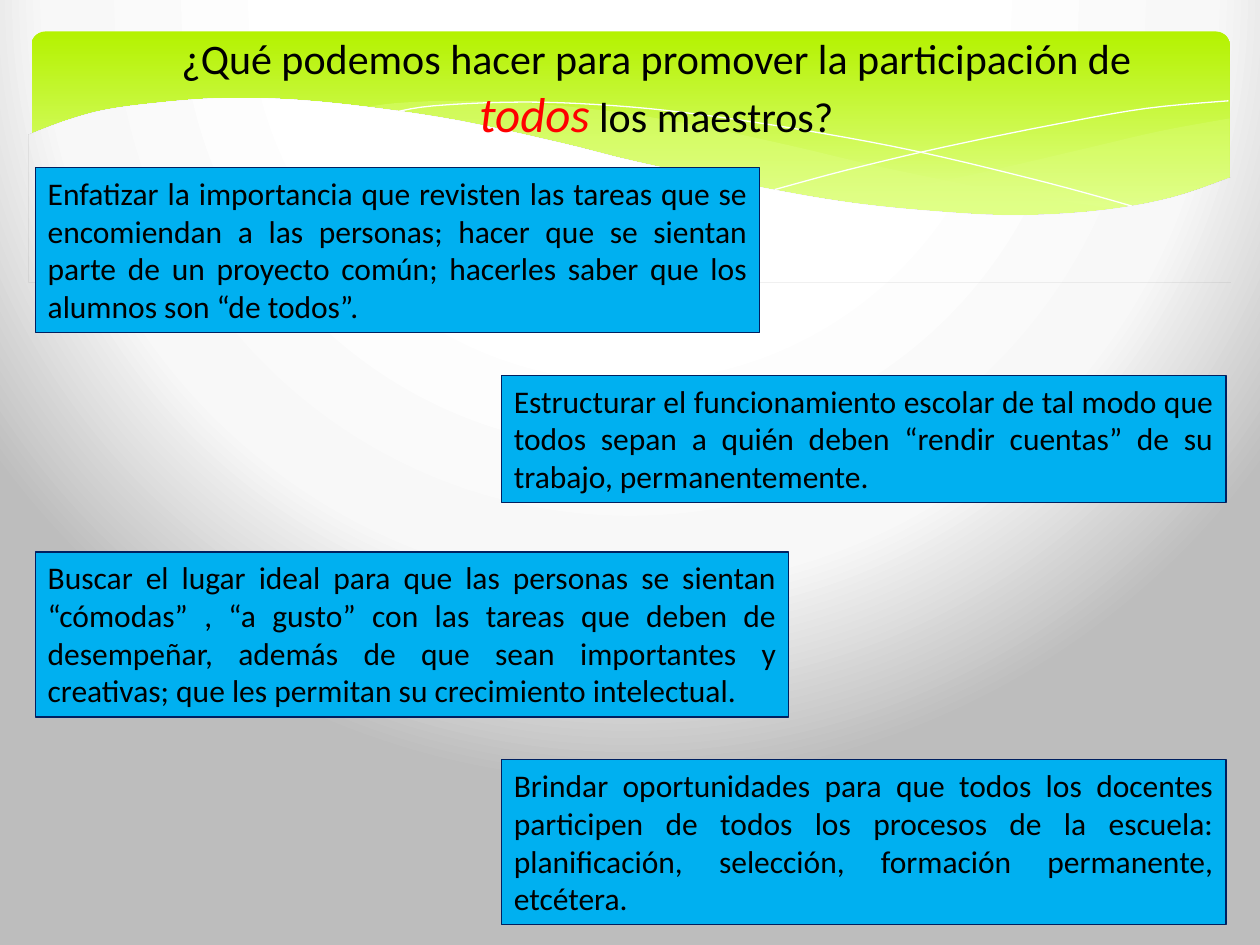
from pptx import Presentation
from pptx.dml.color import RGBColor
from pptx.enum.shapes import MSO_SHAPE as Preset
from pptx.enum.text import MSO_ANCHOR as Anchor, MSO_AUTO_SIZE as AutoSize, PP_ALIGN as Align
from pptx.oxml import parse_xml
from pptx.oxml.ns import nsdecls, qn
from pptx.util import Inches, Pt

FONT = "Calibri"
TITLE = [
    ("¿Qué podemos hacer para promover la participación de ", {}),
    ("todos", {"size": 28, "color": "FF0000", "italic": True}),
    (" los maestros?", {}),
]
LEFT, RIGHT = 0.28, 9.73
# side, top, width, height, text
IDEAS = [
    ("left", 1.33, 5.75, 1.31,
     "Enfatizar la importancia que revisten las tareas que se encomiendan a las personas; "
     "hacer que se sientan parte de un proyecto común; hacerles saber que los alumnos son "
     "“de todos”."),
    ("right", 2.98, 5.75, 1.01,
     "Estructurar el funcionamiento escolar de tal modo que todos sepan a quién deben "
     "“rendir cuentas” de su trabajo, permanentemente."),
    ("left", 4.38, 5.98, 1.31,
     "Buscar el lugar ideal para que las personas se sientan “cómodas” , “a gusto” con las "
     "tareas que deben de desempeñar, además de que sean importantes y creativas; que les "
     "permitan su crecimiento intelectual."),
    ("right", 6.03, 5.75, 1.31,
     "Brindar oportunidades para que todos los docentes participen de todos los procesos de "
     "la escuela: planificación, selección, formación permanente, etcétera."),
]

BACKDROP = [(40, "FFFFFF"), (74, "F8F8F8"), (100, "BDBDBD")]

# Each outline is a list of smooth edges, joined by straight lines
RIGHT_WAVE = [
    [(9.76, 0.94), (9.21, 1.04), (8.61, 1.18), (7.79, 1.37), (7.06, 1.52), (6.61, 1.6)],
    [(6.61, 1.6), (7.19, 1.67), (7.81, 1.72), (8.35, 1.72), (8.89, 1.66), (9.35, 1.56),
     (9.76, 1.41)],
]
MIDDLE_WAVE = [
    [(8.93, 1.67), (8.07, 1.54), (7.06, 1.34), (6.29, 1.16), (5.55, 1), (4.89, 0.89),
     (4.2, 0.82), (3.61, 0.8), (3.13, 0.82), (2.86, 0.86)],
    [(2.86, 0.86), (3.62, 0.97), (4.49, 1.16), (5.3, 1.35), (6.01, 1.5), (6.8, 1.63),
     (7.48, 1.7), (8.07, 1.73), (8.57, 1.71), (8.93, 1.67)],
]
FALLING_LINE = [[(3.09, 0.9), (3.44, 0.84), (4.16, 0.81), (4.89, 0.84), (5.56, 0.91),
                 (6.36, 1.03), (7.27, 1.2), (8.31, 1.45), (9.07, 1.66)]]
RISING_LINE = [[(6.13, 1.51), (6.72, 1.35), (7.48, 1.17), (8.36, 0.99), (9.1, 0.86),
                (9.75, 0.8)]]
LOWER_EDGE = [
    [(9.77, 1.41), (9.3, 1.57), (8.75, 1.67), (8.09, 1.71), (7.44, 1.68), (6.68, 1.6),
     (5.79, 1.44), (5.03, 1.28), (4.47, 1.14), (3.65, 0.96), (2.92, 0.85), (2.3, 0.79),
     (1.77, 0.78), (1.32, 0.81), (0.85, 0.87), (0.52, 0.96), (0.23, 1.07)],
    [(0.23, 2.24), (9.77, 2.24)],
]


def rgb(value):
    return RGBColor.from_string(value)


def smooth(knots, steps=5):
    """Return points on a Catmull-Rom curve through the knots."""
    padded = [knots[0], *knots, knots[-1]]
    points = [knots[0]]
    for a, b, c, d in zip(padded, padded[1:], padded[2:], padded[3:]):
        for t in (step / steps for step in range(1, steps + 1)):
            points.append(tuple(
                q + t / 2 * (r - p + t * (2 * p - 5 * q + 4 * r - s
                                          + t * (3 * (q - r) + s - p)))
                for p, q, r, s in zip(a, b, c, d)))
    return points


def add_outline(page, edges, fill=None, opacity=100, line=None):
    points = [(Inches(x), Inches(y)) for edge in edges for x, y in smooth(edge)]
    builder = page.shapes.build_freeform(*points[0])
    builder.add_line_segments(points[1:], close=line is None)
    shape = builder.convert_to_shape()
    shape.shadow.inherit = False
    if fill:
        shape.fill.solid()
        shape.fill.fore_color.rgb = rgb(fill)
        color = shape.fill._xPr.find(".//" + qn("a:srgbClr"))
        color.append(parse_xml(f'<a:alpha {nsdecls("a")} val="{opacity * 1000}"/>'))
    elif line:
        shape.fill.background()
    if line:
        shape.line.color.rgb = rgb(line)
        shape.line.width = Pt(0)
    else:
        shape.line.fill.background()
    return shape


def add_text(box, runs, size=18, color="000000", align=Align.JUSTIFY):
    frame = box.text_frame
    frame.word_wrap = True
    frame.auto_size = AutoSize.SHAPE_TO_FIT_TEXT
    frame.vertical_anchor = Anchor.TOP
    para = frame.paragraphs[0]
    para.alignment = align
    for text, style in runs:
        span = para.add_run()
        span.text = text
        span.font.name = FONT
        span.font.size = Pt(style.get("size", size))
        span.font.italic = style.get("italic", False)
        span.font.color.rgb = rgb(style.get("color", color))


def set_backdrop(page):
    stops = "".join(f'<a:gs pos="{at * 1000}"><a:srgbClr val="{color}"/></a:gs>'
                    for at, color in BACKDROP)
    page.background.fill.solid()
    properties = page.background._cSld.bg.bgPr
    properties.replace(properties[0], parse_xml(
        f'<a:gradFill {nsdecls("a")} rotWithShape="1"><a:gsLst>{stops}</a:gsLst>'
        '<a:path path="circle"><a:fillToRect l="20000" t="-40000" r="20000" b="140000"/>'
        '</a:path></a:gradFill>'))


def add_banner(page):
    band = page.shapes.add_shape(Preset.ROUNDED_RECTANGLE, Inches(0.25), Inches(0.25),
                                 Inches(9.51), Inches(1.56))
    band.adjustments[0] = 0.07
    band.shadow.inherit = False
    band.line.fill.background()
    band.fill.gradient()
    band.fill.gradient_angle = 270
    for stop, (position, color) in zip(band.fill.gradient_stops,
                                       [(0, "B4F200"), (0.9, "E2FF8E")]):
        stop.position = position
        stop.color.rgb = rgb(color)
    add_outline(page, RIGHT_WAVE, fill="DFFF82", opacity=29)
    add_outline(page, MIDDLE_WAVE, fill="DFFF82", opacity=40)
    for curve in (FALLING_LINE, RISING_LINE):
        add_outline(page, curve, line="FFFFFF")
    # The lower edge shows the slide background through the band
    cover = add_outline(page, LOWER_EDGE)._element
    cover.remove(cover.find(qn("p:style")))
    cover.set("useBgFill", "1")


def main():
    deck = Presentation()
    deck.slide_width, deck.slide_height = Inches(10), Inches(7.5)
    page = deck.slides.add_slide(deck.slide_layouts[6])
    set_backdrop(page)
    add_banner(page)
    title = page.shapes.add_textbox(Inches(1.06), Inches(0.21), Inches(8.3), Inches(0.98))
    add_text(title, TITLE, size=24, align=Align.CENTER)
    for side, top, width, height, text in IDEAS:
        left = LEFT if side == "left" else RIGHT - width
        box = page.shapes.add_shape(Preset.RECTANGLE, Inches(left), Inches(top),
                                    Inches(width), Inches(height))
        box.shadow.inherit = False
        box.fill.solid()
        box.fill.fore_color.rgb = rgb("00B0F0")
        box.line.color.rgb = rgb("002060")
        box.line.width = Pt(0.75)
        add_text(box, [(text, {})])
    deck.save("out.pptx")


if __name__ == "__main__":
    main()
